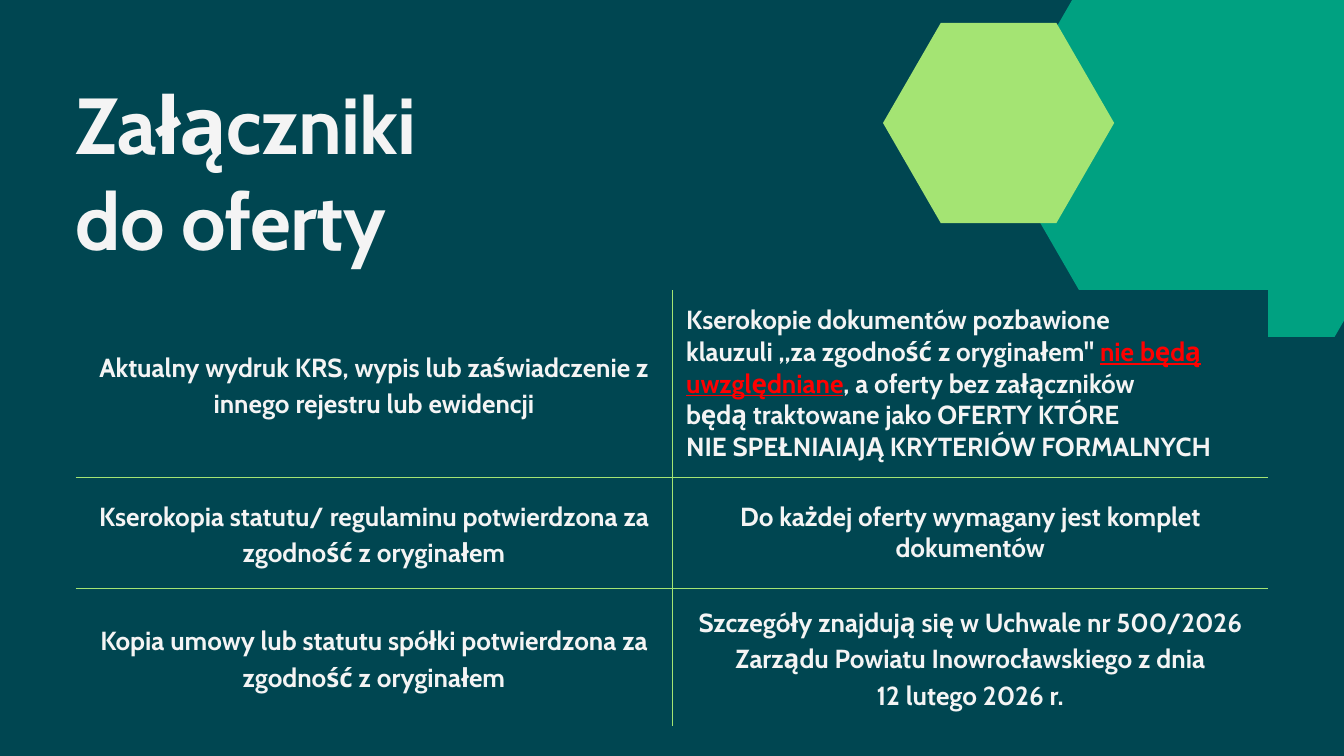
from dataclasses import dataclass
from math import cos, pi, sin

from lxml.etree import SubElement
from pptx import Presentation
from pptx.dml.color import RGBColor
from pptx.enum.text import MSO_ANCHOR, MSO_AUTO_SIZE, PP_ALIGN
from pptx.oxml import parse_xml
from pptx.oxml.ns import nsdecls, qn
from pptx.util import Inches, Pt


@dataclass(frozen=True)
class Theme:
    font: str = "Cabin"
    background: str = "004651"
    teal: str = "00A181"
    lime: str = "A4E473"
    text: str = "F4F4F4"
    warning: str = "FF0000"
    title_size: float = 85
    title_leading: float = 102
    body_size: float = 28
    body_leading: float = 39.2
    rule_width: float = 0.75


THEME = Theme()
WIDTH, HEIGHT = 20, 11.25
MARGIN = HEIGHT / 10
TABLE_TOP = 4.32
ROW_HEIGHTS = (2.75, 1.65, 2.01)
CELL_INSET = 0.21

# Each cell: alignment, line spacing, paragraphs of (text, is_warning) runs
CENTER, LEFT = PP_ALIGN.CENTER, PP_ALIGN.LEFT
LOOSE = Pt(THEME.body_leading)
ATTACHMENTS = (
    (
        (CENTER, LOOSE, [[("Aktualny wydruk KRS, wypis lub zaświadczenie z "
                           "innego rejestru lub ewidencji", False)]]),
        (LEFT, None, [
            [("Kserokopie dokumentów pozbawione", False)],
            [("klauzuli „za zgodność z oryginałem\" ", False),
             ("nie będą uwzględniane", True),
             (", a oferty bez załączników", False)],
            [("będą traktowane jako OFERTY KTÓRE\n"
              "NIE SPEŁNIAIAJĄ KRYTERIÓW FORMALNYCH", False)],
        ]),
    ),
    (
        (CENTER, LOOSE, [[("Kserokopia statutu/ regulaminu potwierdzona za "
                           "zgodność z oryginałem", False)]]),
        (CENTER, None, [[("Do każdej oferty wymagany jest komplet", False)],
                        [("dokumentów", False)]]),
    ),
    (
        (CENTER, LOOSE, [[("Kopia umowy lub statutu spółki potwierdzona za "
                           "zgodność z oryginałem", False)]]),
        (CENTER, LOOSE, [[("Szczegóły znajdują się w Uchwale nr 500/2026 "
                           "Zarządu Powiatu Inowrocławskiego z dnia\n"
                           "12 lutego 2026 r.", False)]]),
    ),
)


def color(value):
    return RGBColor.from_string(value)


def add_spans(para, text, size, ink=THEME.text, underline=None, tracking=None):
    """Add one run per line of text, with line breaks between them."""
    for index, line in enumerate(text.split("\n")):
        if index:
            para.add_line_break()
        span = para.add_run()
        span.text = line
        span.font.name = THEME.font
        span.font.size = Pt(size)
        span.font.bold = True
        span.font.underline = underline
        span.font.color.rgb = color(ink)
        if tracking is not None:
            span.font._element.set("spc", str(round(tracking * 100)))


def add_hexagon(page, center_x, center_y, radius, fill):
    corners = [(Inches(center_x + radius * cos(step * pi / 3)),
                Inches(center_y + radius * sin(step * pi / 3)))
               for step in range(6)]
    builder = page.shapes.build_freeform(*corners[0])
    builder.add_line_segments(corners[1:], close=True)
    hexagon = builder.convert_to_shape()
    hexagon.shadow.inherit = False
    hexagon.fill.solid()
    hexagon.fill.fore_color.rgb = color(fill)
    hexagon.line.fill.background()


def add_title(page, text):
    box = page.shapes.add_textbox(Inches(MARGIN), Inches(MARGIN),
                                  Inches(7.56), Inches(2.82))
    frame = box.text_frame
    frame.word_wrap = True
    frame.auto_size = MSO_AUTO_SIZE.SHAPE_TO_FIT_TEXT
    frame.margin_left = frame.margin_top = 0
    frame.margin_right = frame.margin_bottom = 0
    para = frame.paragraphs[0]
    para.line_spacing = Pt(THEME.title_leading)
    add_spans(para, text, THEME.title_size, tracking=-0.8)


def set_borders(cell, **visible):
    """Rule the inner sides of a cell and clear its outer sides."""
    properties = cell._tc.get_or_add_tcPr()
    for index, side in enumerate(("L", "R", "T", "B")):
        line = parse_xml(f"<a:ln{side} {nsdecls('a')}/>")
        if visible[side]:
            line.set("w", str(Pt(THEME.rule_width)))
            fill = SubElement(line, qn("a:solidFill"))
            SubElement(fill, qn("a:srgbClr")).set("val", THEME.lime)
        else:
            line.set("w", "0")
            SubElement(line, qn("a:noFill"))
        properties.insert(index, line)


def fill_cell(cell, alignment, spacing, paragraphs):
    cell.fill.solid()
    cell.fill.fore_color.rgb = color(THEME.background)
    cell.vertical_anchor = MSO_ANCHOR.MIDDLE
    cell.margin_left = cell.margin_right = Inches(CELL_INSET)
    cell.margin_top = cell.margin_bottom = Inches(CELL_INSET)
    frame = cell.text_frame
    for index, runs in enumerate(paragraphs):
        para = frame.add_paragraph() if index else frame.paragraphs[0]
        para.alignment = alignment
        para.line_spacing = spacing
        for text, is_warning in runs:
            ink = THEME.warning if is_warning else THEME.text
            add_spans(para, text, THEME.body_size, ink, is_warning)


def add_attachment_table(page, rows):
    row_count, column_count = len(rows), len(rows[0])
    frame = page.shapes.add_table(
        row_count, column_count, Inches(MARGIN), Inches(TABLE_TOP),
        Inches(WIDTH - 2 * MARGIN), Inches(sum(ROW_HEIGHTS)))
    table = frame.table
    table.first_row = table.horz_banding = False
    for row, height in zip(table.rows, ROW_HEIGHTS):
        row.height = Inches(height)
    for row_index, row in enumerate(rows):
        for column_index, content in enumerate(row):
            cell = table.cell(row_index, column_index)
            fill_cell(cell, *content)
            set_borders(cell,
                        L=column_index > 0, R=column_index < column_count - 1,
                        T=row_index > 0, B=row_index < row_count - 1)


def main():
    deck = Presentation()
    deck.slide_width, deck.slide_height = Inches(WIDTH), Inches(HEIGHT)
    page = deck.slides.add_slide(deck.slide_layouts[6])
    page.background.fill.solid()
    page.background.fill.fore_color.rgb = color(THEME.background)

    # Corner decoration
    add_hexagon(page, 18.16, 2.07, 3.4, THEME.teal)
    add_hexagon(page, 14.86, 1.83, 1.72, THEME.lime)

    # Content
    add_attachment_table(page, ATTACHMENTS)
    add_title(page, "Załączniki\ndo oferty")

    deck.save("out.pptx")


if __name__ == "__main__":
    main()
